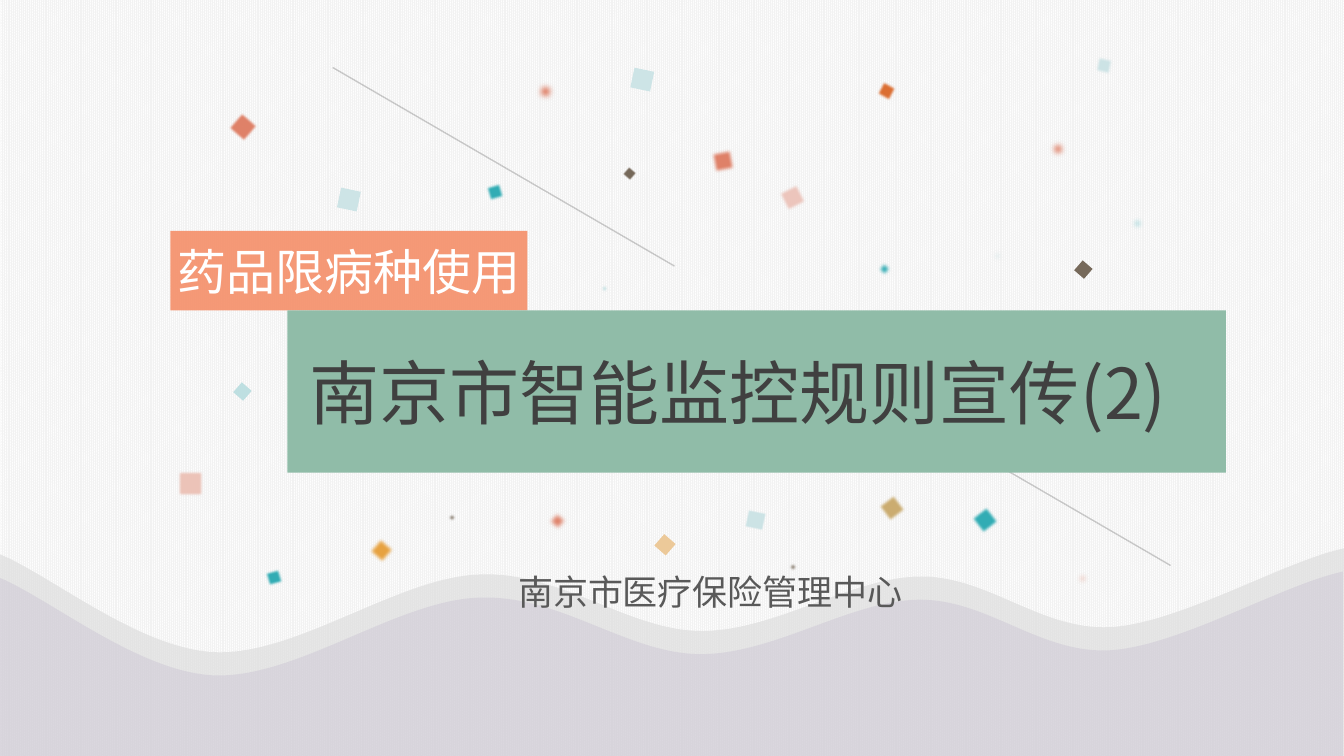
"""Build the cover slide with waves, confetti and a title banner."""
from lxml import etree
from pptx import Presentation, util as u
from pptx.dml.color import RGBColor
from pptx.enum import dml, shapes, text
from pptx.oxml.ns import qn

FONT = "Noto Sans CJK SC"
HEX = {
    "white": "FFFFFF", "paper": "F2F2F2", "mist": "D9D9D9", "lilac": "BEB3CB",
    "ink": "0D0D0D", "dark": "404040", "grey": "595959", "peach": "F58C65",
    "green": "90BCA8", "coral": "E08269", "teal": "32ADB5", "pale": "CDE4E6",
    "pink": "EDC6BD", "rose": "EDC4B9", "rust": "DC6F33", "sand": "CCAD71",
    "cream": "ECC999", "amber": "E8A341", "brown": "76695A", "aqua": "BEDFE1",
}
TITLE = "南京市智能监控规则宣传(2)"
TAG = "药品限病种使用"
OWNER = "南京市医疗保险管理中心"

EDGE = [(13.33, 5.44), (13.33, 7.5), (0, 7.5), (0, 5.5), (0.07, 5.53)]
CURVES = [
    ((0.61, 5.79), (1.41, 6.43), (2.12, 6.47)),
    ((2.94, 6.51), (3.94, 5.73), (4.75, 5.7)),
    ((5.56, 5.66), (6.23, 6.26), (6.96, 6.26)),
    ((7.69, 6.26), (8.44, 5.73), (9.12, 5.72)),
    ((9.81, 5.71), (10.33, 6.27), (11.04, 6.22)),
    ((11.71, 6.17), (12.7, 5.59), (13.29, 5.45)),
]

# left, top, side, turn, colour, soft edge in points
BITS = [
    (2.27, 1.12, 0.28, 41, "coral", 2), (4.81, 1.81, 0.2, 74, "teal", 2),
    (6.27, 0.69, 0.2, 102, "pale", 0), (7.72, 1.82, 0.28, 63, "pink", 2.5),
    (1.75, 4.66, 0.28, 90, "rose", 2), (8.69, 0.8, 0.21, 298, "rust", 2),
    (8.71, 4.9, 0.28, 323, "sand", 2.5), (6.52, 5.33, 0.15, 41, "cream", 0),
    (11.14, 2.08, 0.28, 322, "teal", 5), (3.64, 5.32, 0.28, 41, "amber", 3),
    (9.42, 1.71, 0.13, 41, "brown", 5), (9.85, 5.56, 0.13, 41, "aqua", 5),
    (7.03, 1.46, 0.28, 79, "coral", 3), (5.39, 5.03, 0.28, 41, "coral", 4),
    (2.62, 5.63, 0.2, 74, "teal", 2), (8.67, 2.57, 0.2, 39, "teal", 3),
    (7.39, 5.06, 0.2, 102, "pale", 1), (3.36, 1.88, 0.2, 102, "pale", 0),
    (5.27, 0.77, 0.28, 8, "coral", 5), (7.8, 5.56, 0.13, 41, "brown", 2),
    (7.03, 2.53, 0.13, 41, "brown", 5), (9.63, 5.02, 0.28, 322, "teal", 2.5),
    (5.93, 2.8, 0.13, 41, "aqua", 2), (2.34, 3.82, 0.13, 41, "aqua", 0),
    (10.6, 5.6, 0.28, 41, "coral", 5), (10.68, 2.61, 0.13, 41, "brown", 0),
    (10.35, 1.34, 0.28, 79, "coral", 5), (10.85, 0.55, 0.2, 102, "pale", 2),
    (4.42, 5.07, 0.13, 41, "brown", 2), (6.18, 1.66, 0.13, 41, "brown", 1),
    (9.79, 2.44, 0.2, 102, "pale", 4),
]


def rgb(name):
    return RGBColor.from_string(HEX[name])


def fade(fill, share):
    tint = fill._xPr.find(".//" + qn("a:srgbClr"))
    etree.SubElement(tint, qn("a:alpha"), val=str(share * 1000))


def paint(shape, name, share=100):
    shape.shadow.inherit = False
    shape.line.fill.background()
    shape.fill.solid()
    shape.fill.fore_color.rgb = rgb(name)
    if share < 100:
        fade(shape.fill, share)
    return shape


def rect(box, name, share=100):
    kind = shapes.MSO_SHAPE.RECTANGLE
    return paint(slide.shapes.add_shape(kind, *map(u.Inches, box)), name, share)


def line(a, b):
    kind = shapes.MSO_CONNECTOR.STRAIGHT
    rule = slide.shapes.add_connector(kind, *map(u.Inches, a + b))
    rule.line.width = u.Pt(1)
    rule.line.color.rgb = rgb("ink")
    fade(rule.line.fill, 20)
    etree.SubElement(rule._element.spPr, qn("a:effectLst"))


def write(words, box, size, color, shape=None):
    shape = shape or slide.shapes.add_textbox(0, 0, 0, 0)
    shape.left, shape.top, shape.width, shape.height = map(u.Inches, box)
    frame = shape.text_frame
    frame.word_wrap = True
    frame.auto_size = text.MSO_AUTO_SIZE.SHAPE_TO_FIT_TEXT
    frame.vertical_anchor = text.MSO_ANCHOR.TOP
    para = frame.paragraphs[0]
    para.alignment = text.PP_ALIGN.LEFT
    run = para.add_run()
    run.text = words
    run.font.size = u.Pt(size)
    run.font.name = FONT
    run.font.color.rgb = rgb(color)
    etree.SubElement(run.font._element, qn("a:ea"), typeface=FONT)


def wave(dx, dy, low, name, share):
    def place(dot):
        x, y = dot
        return u.Inches(x + dx), u.Inches(low if y == 7.5 else y + dy)

    dots = [place(dot) for dot in EDGE + [curve[-1] for curve in CURVES]]
    form = slide.shapes.build_freeform(*dots[0])
    form.add_line_segments(dots[1:], close=True)
    shape = paint(form.convert_to_shape(), name, share)
    legs = list(shape._element.iter(qn("a:lnTo")))[len(EDGE) - 1:]
    for leg, curve in zip(legs, CURVES):
        leg.clear()
        arc = etree.Element(qn("a:cubicBezTo"))
        for x, y in map(place, curve):
            etree.SubElement(arc, qn("a:pt"), x=str(x - shape.left),
                             y=str(y - shape.top))
        leg.getparent().replace(leg, arc)


deck = Presentation()
deck.slide_width, deck.slide_height = u.Inches(13.33), u.Inches(7.5)
slide = deck.slides.add_slide(deck.slide_layouts[5])
back = slide.background.fill
back.patterned()
back.pattern = dml.MSO_PATTERN.PERCENT_90
back.fore_color.rgb = rgb("paper")
back.back_color.rgb = rgb("white")

wave(0, 0, 7.5, "mist", 60)
line((8.22, 3.64), (11.61, 5.61))
rect((1.69, 2.29, 3.54, 0.79), "peach", 88)
write(TAG, (1.66, 2.35, 3.94, 0.69), 35, "white")
rect((2.85, 3.08, 9.31, 1.61), "green")
head = slide.shapes.title
slide.shapes._spTree.append(head._element)
write(TITLE, (2.97, 3.42, 9.05, 0.94), 50, "dark", head)
line((3.3, 0.67), (6.69, 2.64))
wave(-0.01, 0.23, 7.5, "lilac", 30)
write(OWNER, (5.04, 5.61, 4.15, 0.52), 25, "grey")

for x, y, side, turn, name, soft in BITS:
    bit = rect((x, y, side, side), name)
    bit.rotation = turn
    if soft:
        glow = bit._element.spPr.find(qn("a:effectLst"))
        etree.SubElement(glow, qn("a:softEdge"), rad=str(u.Pt(soft)))

deck.save("out.pptx")
